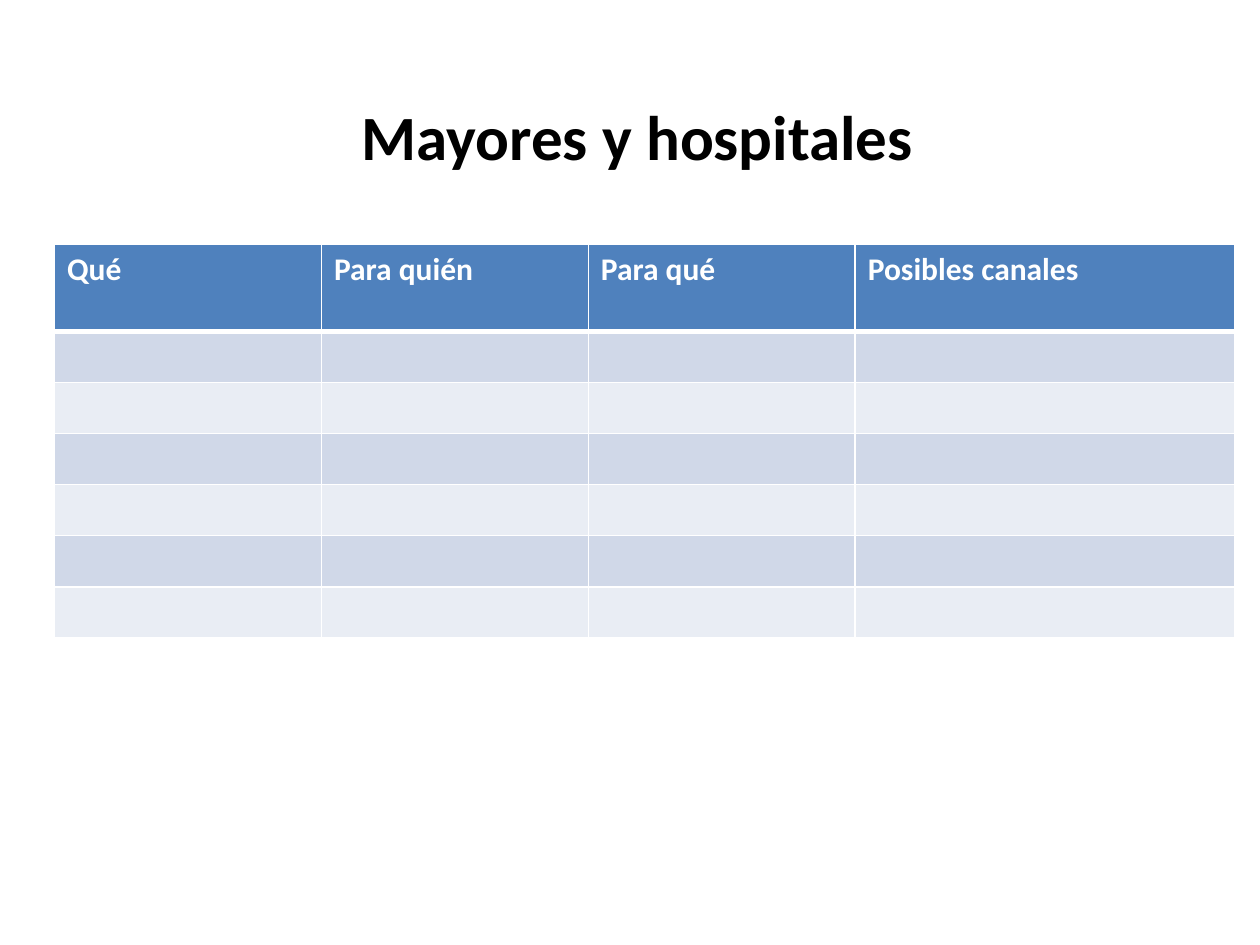
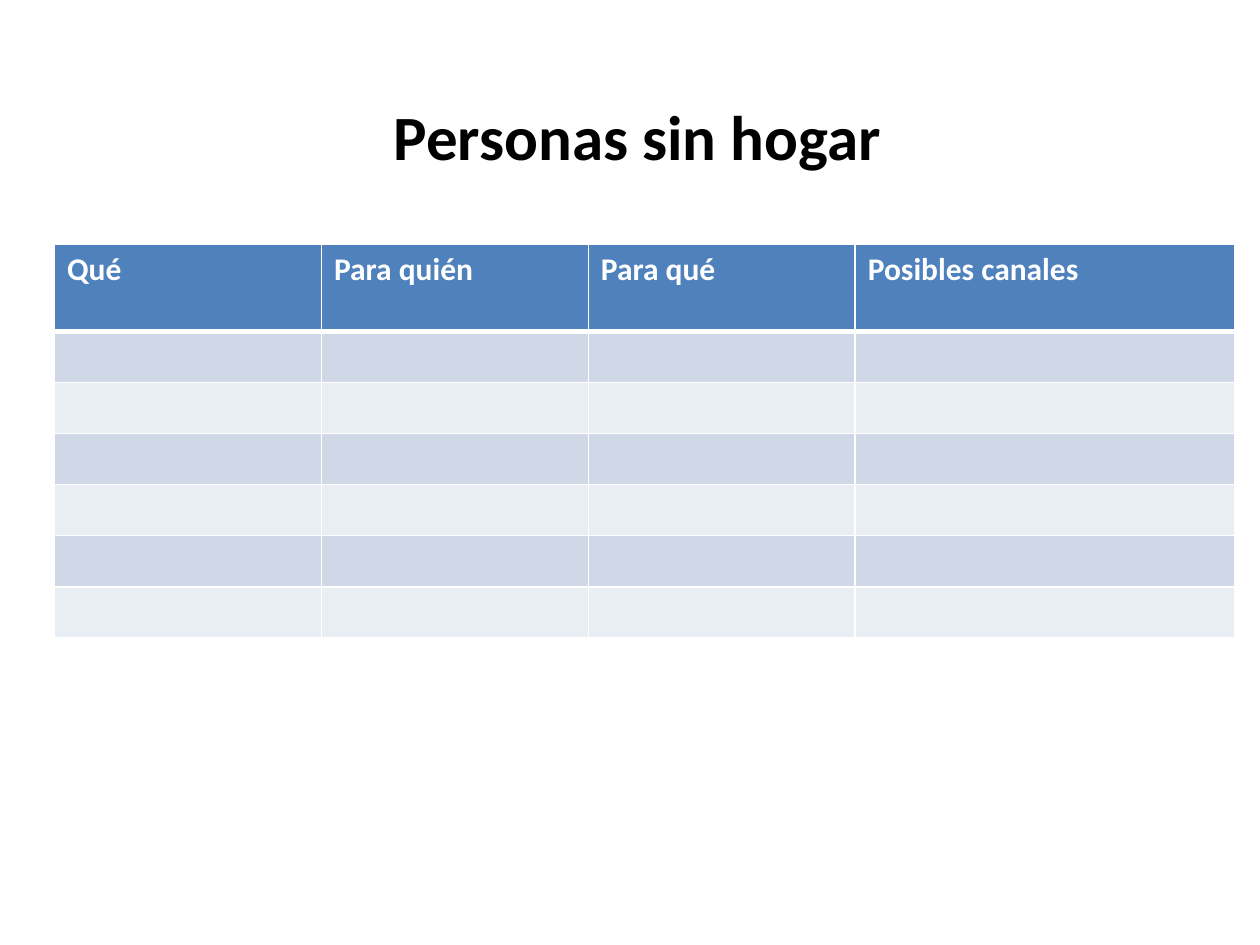
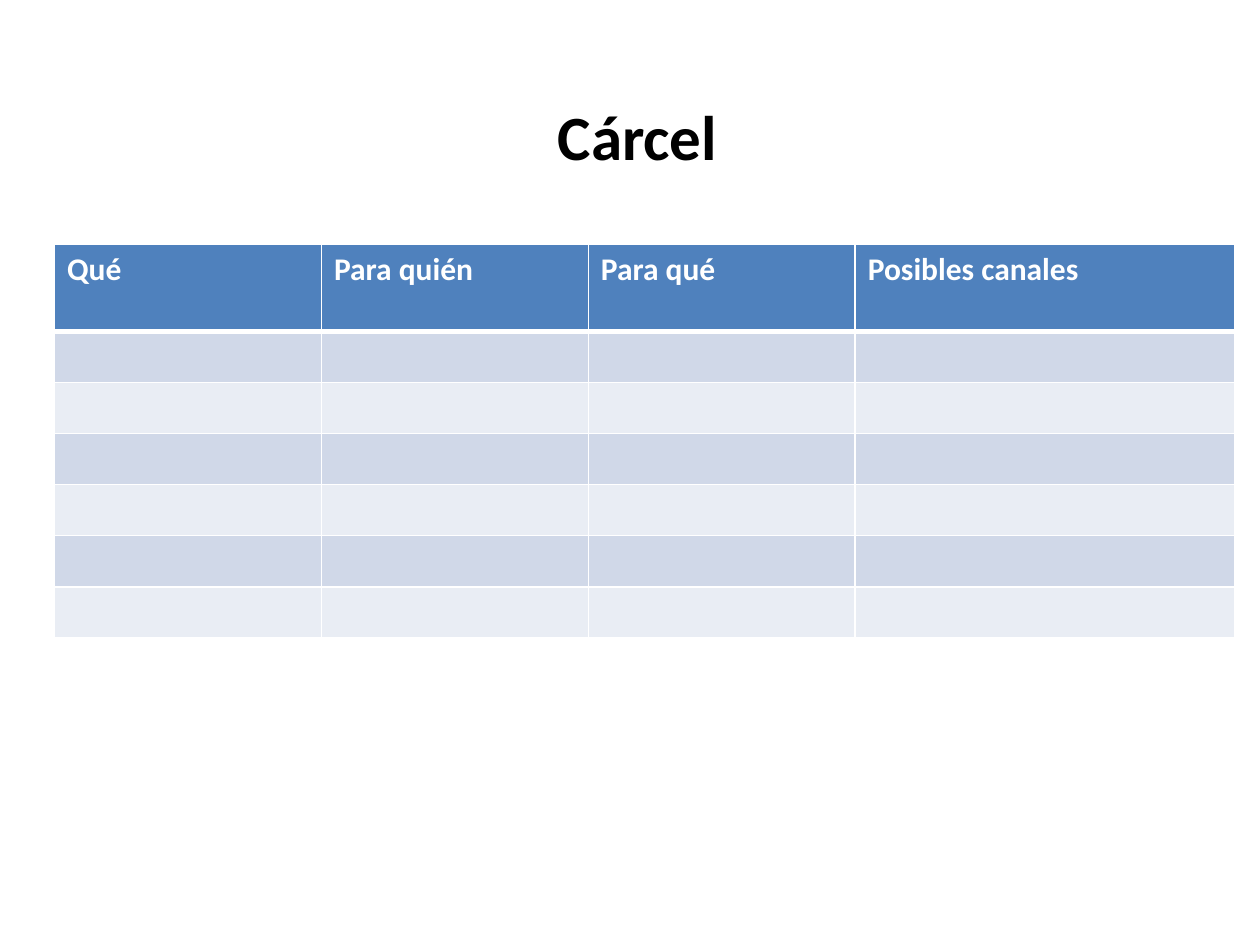
"""Build three planning slides, each with a title and an empty four-column table."""
from lxml.etree import SubElement
from pptx import Presentation
from pptx.dml.color import RGBColor
from pptx.enum.text import MSO_ANCHOR, MSO_AUTO_SIZE, PP_ALIGN
from pptx.oxml.ns import qn
from pptx.util import Cm, Pt

FONT = "Calibri"
BLACK = RGBColor(0x00, 0x00, 0x00)
WHITE = RGBColor(0xFF, 0xFF, 0xFF)
HEADER_BLUE = RGBColor(0x4F, 0x81, 0xBD)
BANDS = [RGBColor(0xD0, 0xD8, 0xE8), RGBColor(0xE9, 0xED, 0xF4)]

TITLES = ["Mayores y hospitales", "Personas sin hogar", "Cárcel"]
HEADINGS = ["Qué", "Para quién", "Para qué", "Posibles canales"]
COLUMN_WIDTHS = [Cm(5.38), Cm(5.38), Cm(5.38), Cm(7.65)]
ROW_HEIGHTS = [Cm(1.75)] + [Cm(1.03)] * 6


def style_text(paragraph, size, color):
    for span in paragraph.runs:
        span.font.name = FONT
        span.font.size = Pt(size)
        span.font.bold = True
        span.font.color.rgb = color


def set_border(cell, side, width):
    line = SubElement(cell._tc.get_or_add_tcPr(), qn(f"a:ln{side}"), w=str(Pt(width)))
    fill = SubElement(line, qn("a:solidFill"))
    SubElement(fill, qn("a:srgbClr"), val=str(WHITE))


deck = Presentation()
deck.slide_width, deck.slide_height = Cm(25.4), Cm(19.05)
title_only = deck.slide_layouts[5]

for title_text in TITLES:
    page = deck.slides.add_slide(title_only)

    title = page.shapes.title
    title.left, title.top, title.width, title.height = Cm(6.5), Cm(1.83), Cm(12.7), Cm(1.8)
    frame = title.text_frame
    frame.text = title_text
    frame.word_wrap = True
    frame.auto_size = MSO_AUTO_SIZE.NONE
    frame.vertical_anchor = MSO_ANCHOR.TOP
    frame.paragraphs[0].alignment = PP_ALIGN.CENTER
    style_text(frame.paragraphs[0], 36, BLACK)

    table = page.shapes.add_table(
        len(ROW_HEIGHTS), len(HEADINGS), Cm(1.1), Cm(4.93),
        sum(COLUMN_WIDTHS), sum(ROW_HEIGHTS),
    ).table
    for column, width in zip(table.columns, COLUMN_WIDTHS):
        column.width = width
    for row_index, (row, height) in enumerate(zip(table.rows, ROW_HEIGHTS)):
        row.height = height
        for cell in row.cells:
            for side in "LRTB":
                under_header = (row_index, side) in [(0, "B"), (1, "T")]
                set_border(cell, side, 3 if under_header else 1)
            cell.fill.solid()
            cell.fill.fore_color.rgb = BANDS[(row_index - 1) % 2] if row_index else HEADER_BLUE
    for cell, heading in zip(table.rows[0].cells, HEADINGS):
        cell.text_frame.text = heading
        style_text(cell.text_frame.paragraphs[0], 18, WHITE)

deck.save("out.pptx")
